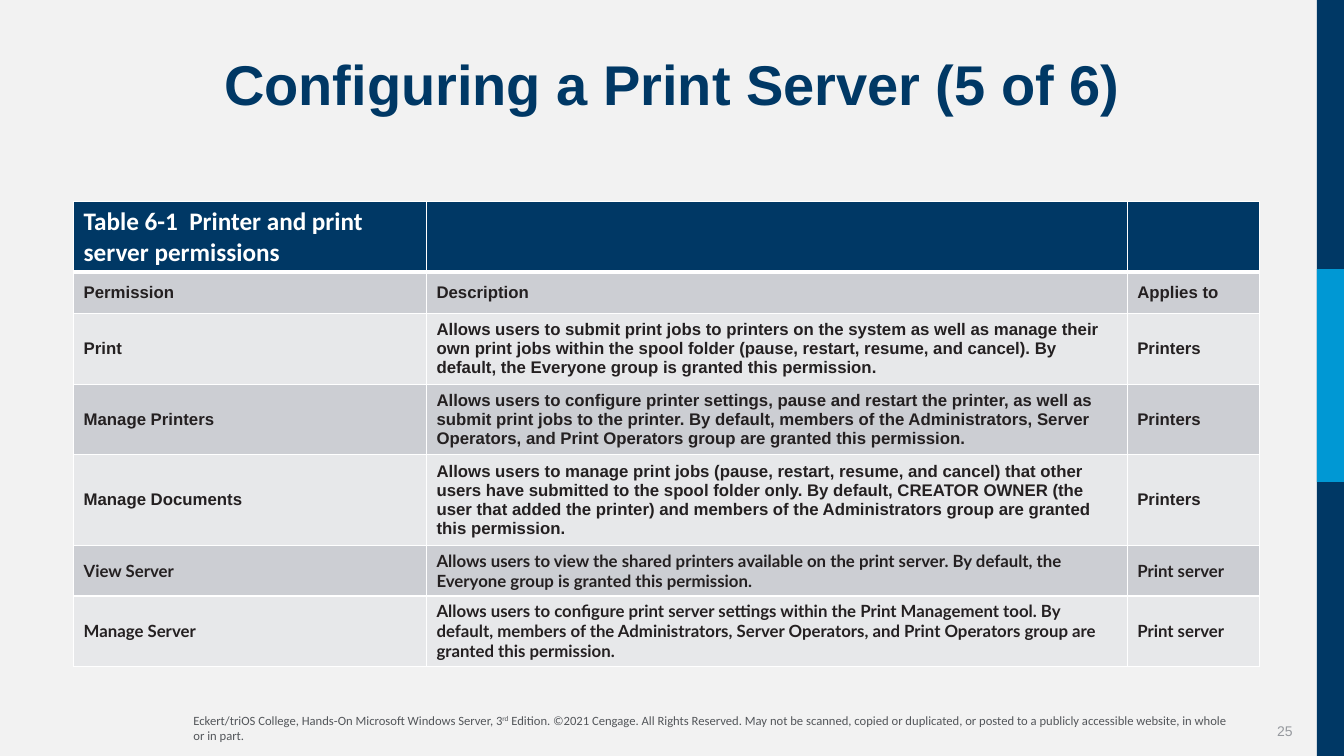
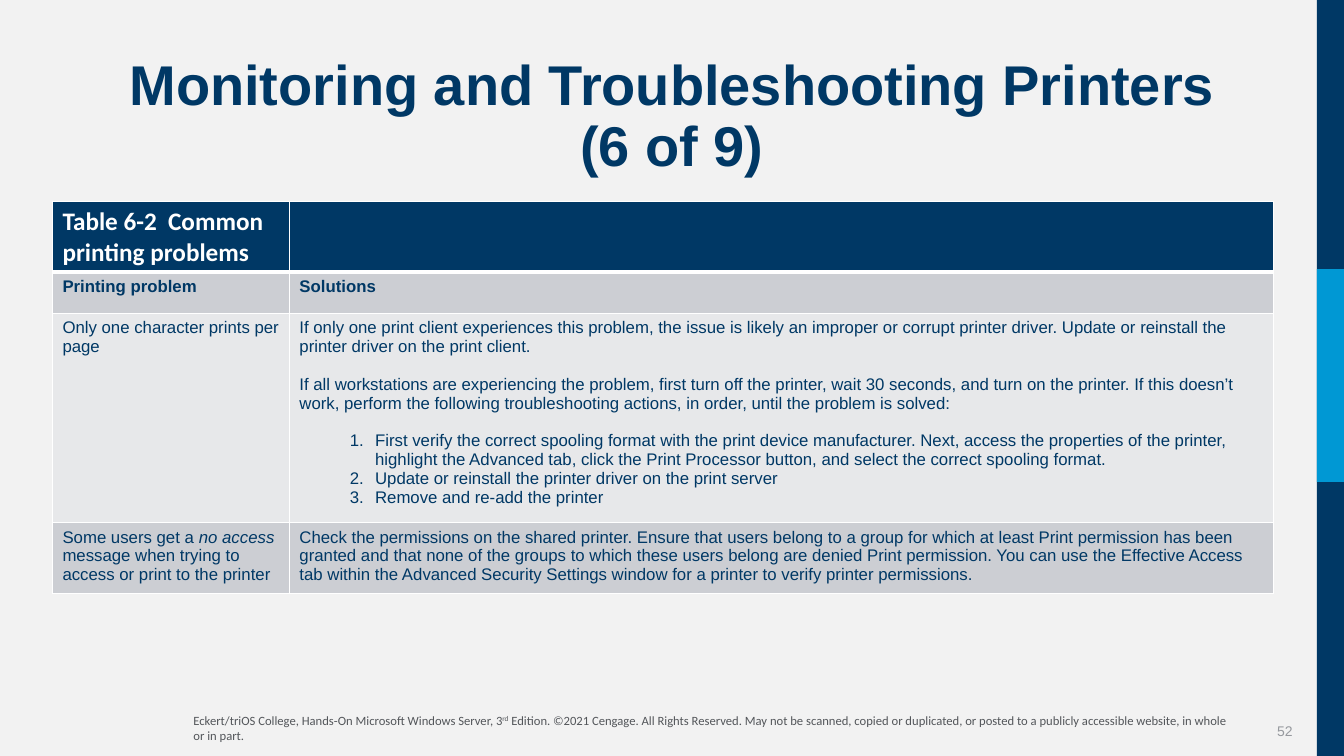
from dataclasses import dataclass

from lxml import etree
from pptx import Presentation
from pptx.dml.color import RGBColor
from pptx.enum.shapes import MSO_SHAPE as SHAPE
from pptx.enum.text import MSO_ANCHOR as ANCHOR, MSO_AUTO_SIZE as AUTO, PP_ALIGN as ALIGN
from pptx.oxml.ns import qn
from pptx.util import Inches, Pt

# Shared look
NAVY, BLUE, PALE, WHITE = "003865", "0098D4", "F2F2F2", "FFFFFF"
INK, FOOT_GREY, NUMBER_GREY = "242021", "53565A", "96999E"
BANDS = ("CCCED3", "E7E8EA")
TITLE_BOX = (0.52, 0.52, 12.29, 1.33)
TABLE_TOP, ROW_HEIGHT = 2, 0.41
PARA_GAP = 13.5


@dataclass
class Style:
    font: str
    size: int
    color: str
    bold: bool = False


@dataclass
class Para:
    runs: list
    numbered: bool = False
    before: float = 0


TITLE = Style("Arial", 40, NAVY, True)
FOOTER = Style("Calibri", 9, FOOT_GREY)
NUMBER = Style("Arial", 10, NUMBER_GREY)
TABLE_TITLE = Style("Calibri", 18, WHITE, True)
PERMISSION = Style("Arial", 12, INK, True)
SERVER = Style("Lato", 12, INK, True)
PROBLEM_HEAD = Style("Arial", 12, NAVY, True)
PROBLEM = Style("Arial", 12, NAVY)

# Table contents: each row is a style and its cells
PERMISSION_ROWS = [
    (TABLE_TITLE, ["Table 6-1  Printer and print server permissions", "", ""]),
    (PERMISSION, ["Permission", "Description", "Applies to"]),
    (PERMISSION, [
        "Print",
        "Allows users to submit print jobs to printers on the system as well as manage "
        "their own print jobs within the spool folder (pause, restart, resume, and "
        "cancel). By default, the Everyone group is granted this permission.",
        "Printers"]),
    (PERMISSION, [
        "Manage Printers",
        "Allows users to configure printer settings, pause and restart the printer, as "
        "well as submit print jobs to the printer. By default, members of the "
        "Administrators, Server Operators, and Print Operators group are granted this "
        "permission.",
        "Printers"]),
    (PERMISSION, [
        "Manage Documents",
        "Allows users to manage print jobs (pause, restart, resume, and cancel) that "
        "other users have submitted to the spool folder only. By default, CREATOR OWNER "
        "(the user that added the printer) and members of the Administrators group are "
        "granted this permission.",
        "Printers"]),
    (SERVER, [
        "View Server",
        "Allows users to view the shared printers available on the print server. By "
        "default, the Everyone group is granted this permission.",
        "Print server"]),
    (SERVER, [
        "Manage Server",
        "Allows users to configure print server settings within the Print Management "
        "tool. By default, members of the Administrators, Server Operators, and Print "
        "Operators group are granted this permission.",
        "Print server"]),
]

PROBLEM_ROWS = [
    (TABLE_TITLE, ["Table 6-2  Common printing problems", ""]),
    (PROBLEM_HEAD, ["Printing problem", "Solutions"]),
    (PROBLEM, [
        "Only one character prints per page",
        [Para(["If only one print client experiences this problem, the issue is likely an "
               "improper or corrupt printer driver. Update or reinstall the printer driver "
               "on the print client."]),
         Para(["If all workstations are experiencing the problem, first turn off the "
               "printer, wait 30 seconds, and turn on the printer. If this doesn’t work, "
               "perform the following troubleshooting actions, in order, until the problem "
               "is solved:"], before=PARA_GAP),
         Para(["First verify the correct spooling format with the print device "
               "manufacturer. Next, access the properties of the printer, highlight the "
               "Advanced tab, click the Print Processor button, and select the correct "
               "spooling format."], numbered=True, before=PARA_GAP),
         Para(["Update or reinstall the printer driver on the print server"], numbered=True),
         Para(["Remove and re-add the printer"], numbered=True)]]),
    (PROBLEM, [
        [Para(["Some users get a ", ("no access ", "italic"),
               "message when trying to access or print to the printer"])],
        "Check the permissions on the shared printer. Ensure that users belong to a group "
        "for which at least Print permission has been granted and that none of the groups "
        "to which these users belong are denied Print permission. You can use the Effective "
        "Access tab within the Advanced Security Settings window for a printer to verify "
        "printer permissions."]),
]

FOOTER_RUNS = [
    "Eckert/triOS College, Hands-On Microsoft Windows Server, 3", ("rd", "super"),
    " Edition. ©2021 Cengage. All Rights Reserved. May not be scanned, copied or "
    "duplicated, or posted to a publicly accessible website, in whole or in part."]


def rgb(value):
    return RGBColor.from_string(value)


def box(values):
    return [Inches(v) for v in values]


# Text
def set_font(font, style):
    font.name, font.size, font.bold = style.font, Pt(style.size), style.bold
    font.color.rgb = rgb(style.color)


def add_runs(p, runs, style):
    for item in runs:
        text, effect = item if isinstance(item, tuple) else (item, None)
        r = p.add_run()
        r.text = text
        set_font(r.font, style)
        if effect == "italic":
            r.font.italic = True
        elif effect == "super":
            r._r.get_or_add_rPr().set("baseline", "30000")


def number_paragraph(p):
    pPr = p._p.get_or_add_pPr()
    pPr.set("marL", str(Inches(0.75)))
    pPr.set("indent", str(Inches(-0.25)))
    etree.SubElement(pPr, qn("a:buFont"), typeface="+mj-lt")
    etree.SubElement(pPr, qn("a:buAutoNum"), type="arabicPeriod")


def fill_text(tf, paras, style):
    for i, para in enumerate(paras):
        p = tf.add_paragraph() if i else tf.paragraphs[0]
        if para.before:
            p.space_before = Pt(para.before)
        if para.numbered:
            number_paragraph(p)
        add_runs(p, para.runs, style)


def add_text(s, place, runs, style, align=ALIGN.LEFT, anchor=ANCHOR.TOP):
    tf = s.shapes.add_textbox(*box(place)).text_frame
    tf.word_wrap, tf.vertical_anchor = True, anchor
    tf.paragraphs[0].alignment = align
    add_runs(tf.paragraphs[0], runs, style)


# Slide frame
def add_band(s, top, height, color):
    sp = s.shapes.add_shape(SHAPE.RECTANGLE, *box((13.06, top, 0.28, height)))
    sp.shadow.inherit = False
    sp.fill.solid()
    sp.fill.fore_color.rgb = rgb(color)
    sp.line.fill.background()


def add_title(s, lines):
    title = s.shapes.title
    title.left, title.top, title.width, title.height = box(TITLE_BOX)
    tf = title.text_frame
    tf.auto_size, tf.vertical_anchor, tf.word_wrap = AUTO.NONE, ANCHOR.TOP, True
    p = tf.paragraphs[0]
    p.alignment, p.line_spacing = ALIGN.CENTER, 0.9
    for i, line in enumerate(lines):
        if i:
            p.add_line_break()
        add_runs(p, [line], TITLE)


def add_slide(prs, title_lines, number):
    s = prs.slides.add_slide(prs.slide_layouts.get_by_name("Title Only"))
    add_text(s, (12.12, 7.05, 0.8, 0.4), [number], NUMBER, ALIGN.RIGHT, ANCHOR.MIDDLE)
    add_text(s, (1.82, 7.02, 10.51, 0.4), FOOTER_RUNS, FOOTER)
    add_band(s, 0, 7.5, NAVY)
    add_band(s, 2.67, 2.11, BLUE)
    add_title(s, title_lines)
    return s


# Tables
def set_borders(cell, top, bottom):
    tcPr = cell._tc.get_or_add_tcPr()
    for side, width in (("L", 1), ("R", 1), ("T", top), ("B", bottom)):
        ln = etree.SubElement(tcPr, qn(f"a:ln{side}"), w=str(Pt(width)))
        solid = etree.SubElement(ln, qn("a:solidFill"))
        etree.SubElement(solid, qn("a:srgbClr"), val=WHITE)


def fill_cell(cell, content, style, color, anchor):
    paras = [Para([content])] if isinstance(content, str) else content
    if content:
        fill_text(cell.text_frame, paras, style)
    cell.vertical_anchor = anchor
    cell.fill.solid()
    cell.fill.fore_color.rgb = rgb(color)


def add_table(s, left, widths, rows, body_anchor):
    place = (left, TABLE_TOP, sum(widths), ROW_HEIGHT * len(rows))
    table = s.shapes.add_table(len(rows), len(widths), *box(place)).table
    for column, width in zip(table.columns, widths):
        column.width = Inches(width)
    for i, (style, contents) in enumerate(rows):
        table.rows[i].height = Inches(ROW_HEIGHT)
        color = BANDS[(i - 1) % 2] if i else NAVY
        anchor = body_anchor if i else ANCHOR.TOP
        for j, content in enumerate(contents):
            cell = table.cell(i, j)
            set_borders(cell, 3 if i == 1 else 1, 3 if i == 0 else 1)
            fill_cell(cell, content, style, color, anchor)


def main():
    prs = Presentation()
    prs.slide_width, prs.slide_height = Inches(13.33), Inches(7.5)
    background = prs.slide_master.background.fill
    background.solid()
    background.fore_color.rgb = rgb(PALE)

    # Print server permissions
    s = add_slide(prs, ["Configuring a Print Server (5 of 6)"], "25")
    add_table(s, 0.73, (3.5, 6.95, 1.31), PERMISSION_ROWS, ANCHOR.MIDDLE)

    # Printing problems
    s = add_slide(prs, ["Monitoring and Troubleshooting Printers", "(6 of 9)"], "52")
    add_table(s, 0.52, (2.35, 9.76), PROBLEM_ROWS, ANCHOR.TOP)

    prs.save("out.pptx")


if __name__ == "__main__":
    main()
